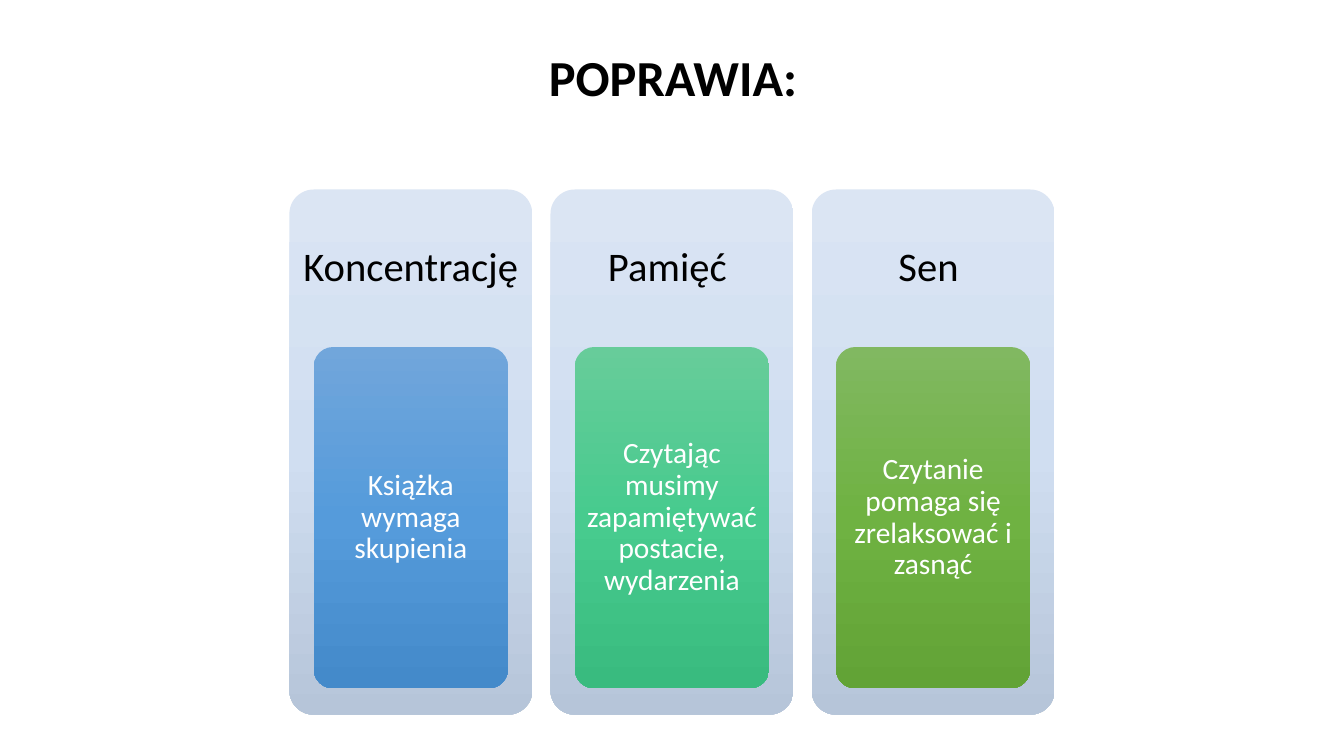
"""Build a slide with three columns on what reading improves."""
from copy import deepcopy

from pptx import Presentation
from pptx.dml.color import RGBColor
from pptx.enum import shapes, text
from pptx.util import Inches, Pt

TITLE = "POPRAWIA:"
PANEL_COLORS = ("DBE5F3", "D0DEF1", "B6C5D9")
COLUMNS = [
    ("Koncentrację", "Książka wymaga skupienia", ("71A6DB", "559BDB", "448ACA")),
    ("Pamięć ", "Czytając musimy zapamiętywać postacie, wydarzenia",
     ("67CC9A", "47CB8E", "39BB7F")),
    ("Sen ", "Czytanie pomaga się zrelaksować i zasnąć", ("81B861", "6FB242", "62A336")),
]
LEFT, TOP, WIDTH, HEIGHT, PITCH = 2.87, 1.88, 2.41, 5.21, 2.59
HEAD_SHARE, CARD_SHARE, SIDE_SHARE = 0.3, 0.65, 0.1
CARD_PAD = 0.055


def color(value):
    return RGBColor.from_string(value)


def add_panel(slide, box, colors):
    sp = slide.shapes.add_shape(
        shapes.MSO_SHAPE.ROUNDED_RECTANGLE, *map(Inches, box))
    sp.adjustments[0] = 0.1
    sp.shadow.inherit = False
    sp.line.fill.background()
    sp.fill.gradient()
    sp.fill.gradient_angle = 270
    stop_list = sp.element.spPr.find(".//{*}gsLst")
    stop_list.append(deepcopy(stop_list[0]))
    for i, (stop, value) in enumerate(zip(sp.fill.gradient_stops, colors)):
        stop.position = i / (len(colors) - 1)
        stop.color.rgb = color(value)


def add_label(slide, box, words, size, value, insets, bold=False, wrap=True, spacing=0.9):
    tf = slide.shapes.add_textbox(*map(Inches, box)).text_frame
    tf.word_wrap = wrap
    tf.vertical_anchor = text.MSO_ANCHOR.MIDDLE
    tf.margin_left = tf.margin_right = Inches(insets[0])
    tf.margin_top = tf.margin_bottom = Inches(insets[1])
    tf.text = words
    p = tf.paragraphs[0]
    p.alignment = text.PP_ALIGN.CENTER
    p.line_spacing = spacing
    font = p.runs[0].font
    font.name, font.size, font.bold = "Calibri", Pt(size), bold
    font.color.rgb = color(value)


def main():
    prs = Presentation()
    prs.slide_width, prs.slide_height = Inches(13.33), Inches(7.5)
    slide = prs.slides.add_slide(prs.slide_layouts[6])
    head_height = HEIGHT * HEAD_SHARE
    side = WIDTH * SIDE_SHARE
    for i, (heading, detail, colors) in enumerate(COLUMNS):
        x = LEFT + i * PITCH
        card = (x + side, TOP + head_height, WIDTH - 2 * side, HEIGHT * CARD_SHARE)
        inner = (card[0] + CARD_PAD, card[1] + CARD_PAD,
                 card[2] - 2 * CARD_PAD, card[3] - 2 * CARD_PAD)
        add_panel(slide, (x, TOP, WIDTH, HEIGHT), PANEL_COLORS)
        add_label(slide, (x, TOP, WIDTH, head_height), heading, 29, "000000", (0.12, 0.12))
        add_panel(slide, card, colors)
        add_label(slide, inner, detail, 21, "FFFFFF", (0.05, 0.04))
    add_label(slide, (5.34, 0.4, 2.67, 0.71), TITLE, 36, "000000", (0.1, 0.05),
              bold=True, wrap=False, spacing=1.0)
    prs.save("out.pptx")


if __name__ == "__main__":
    main()
